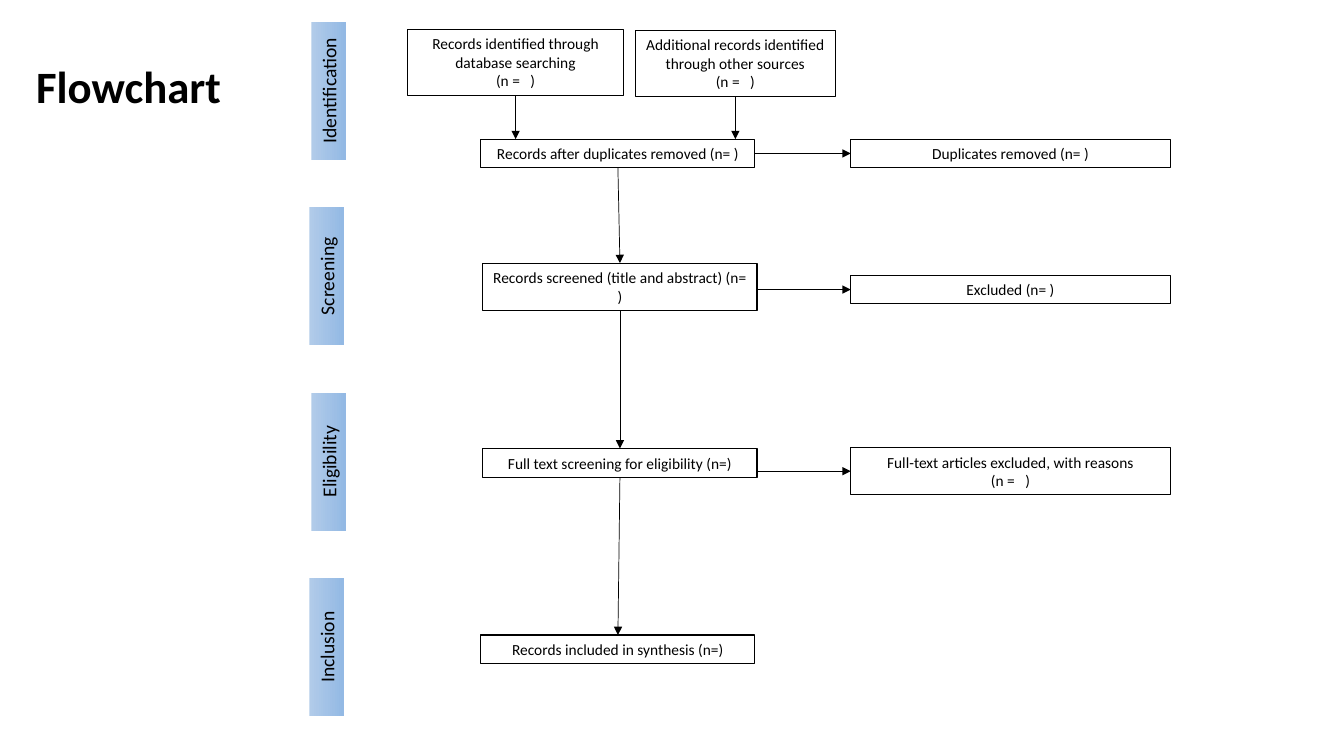
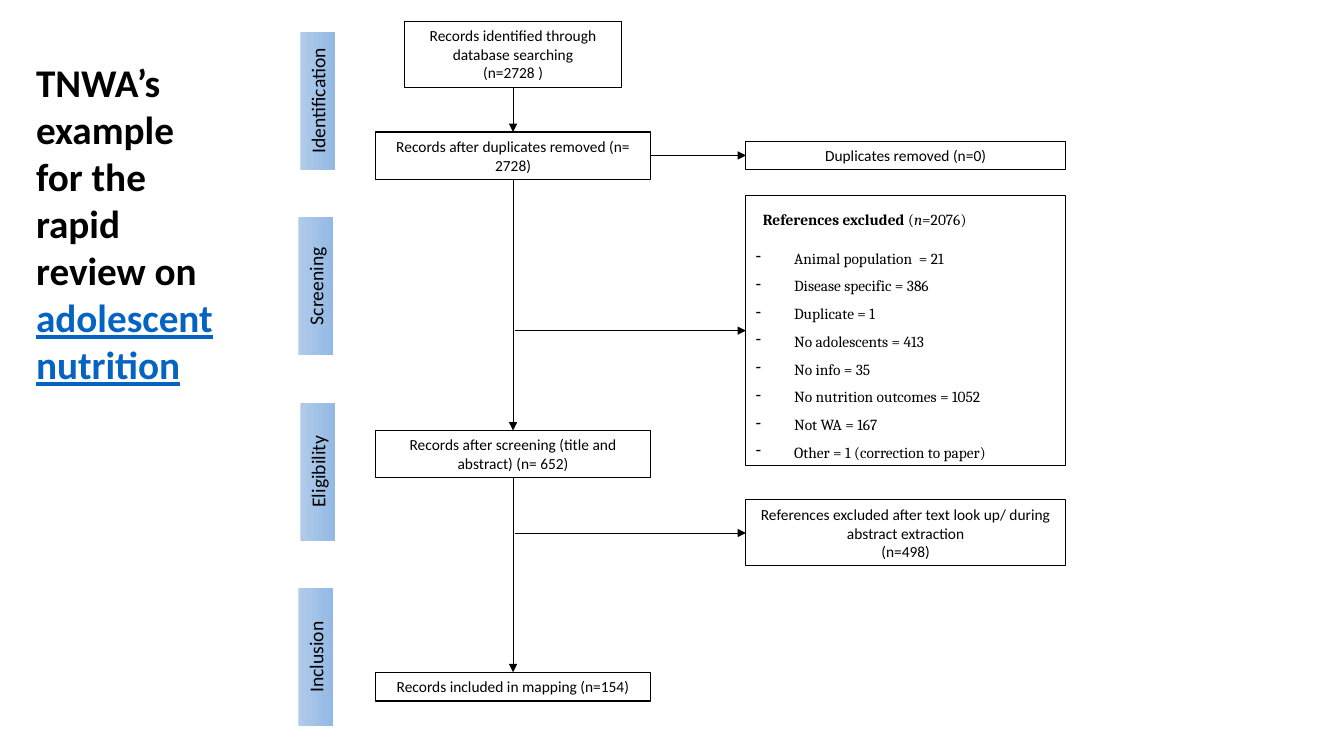
from dataclasses import dataclass

from pptx import Presentation
from pptx.dml.color import RGBColor as Rgb
from pptx.enum.shapes import MSO_CONNECTOR as Connector, MSO_SHAPE as Preset
from pptx.enum.text import MSO_ANCHOR as Anchor, MSO_AUTO_SIZE as AutoSize, PP_ALIGN as Align
from pptx.oxml.ns import qn
from pptx.oxml.xmlchemy import OxmlElement as new_element
from pptx.util import Inches, Pt


@dataclass(frozen=True)
class Theme:
    ink: Rgb = Rgb(0x00, 0x00, 0x00)
    link: Rgb = Rgb(0x05, 0x63, 0xC1)
    stage_start: Rgb = Rgb(0xB1, 0xCB, 0xE9)
    stage_end: Rgb = Rgb(0x93, 0xB9, 0xE4)
    sans: str = "Calibri"
    serif: str = "Cambria"
    body: Pt = Pt(11)
    stage: Pt = Pt(14)
    example_title: Pt = Pt(28)
    title: Pt = Pt(32)
    outline: Pt = Pt(0.75)
    arrow: Pt = Pt(0.5)


THEME = Theme()
COLUMNS, ROWS = 133.33, 75
STAGES = ("Identification", "Screening", "Eligibility", "Inclusion")
SOURCE_WIDTH, STEP_WIDTH, SIDE_WIDTH = 21.5, 27.2, 31.7
LINE_ROWS, PADDING_ROWS = 1.85, 1


def grid(cells):
    return round(cells * Inches(0.1))


def style(para, size, name=THEME.sans, bold=False):
    for span in para.runs:
        font = span.font
        font.size, font.name, font.bold = size, name, bold
        font.color.rgb = THEME.ink


def prepare(frame, anchor):
    frame.word_wrap = True
    frame.auto_size = AutoSize.SHAPE_TO_FIT_TEXT
    frame.vertical_anchor = anchor


def add_box(page, center, top, width, height, anchor=Anchor.MIDDLE):
    box = page.shapes.add_shape(
        Preset.RECTANGLE, grid(center - width / 2), grid(top), grid(width), grid(height))
    box.shadow.inherit = False
    box.fill.background()
    box.line.color.rgb = THEME.ink
    box.line.width = THEME.outline
    prepare(box.text_frame, anchor)
    return box


def write_centered(box, text, size):
    box.text_frame.text = text
    for para in box.text_frame.paragraphs:
        para.alignment = Align.CENTER
        style(para, size)


def add_step(page, text, center, top, width=STEP_WIDTH, lines=1):
    box = add_box(page, center, top, width, lines * LINE_ROWS + PADDING_ROWS)
    write_centered(box, text, THEME.body)
    return box


def add_stages(page, center, middle):
    width, height, pitch, stagger = 13.7, 3.4, 18.4, 0.2
    for index, name in enumerate(STAGES):
        label = add_box(page, center - stagger * (index % 2),
                        middle + pitch * index - height / 2, width, height)
        label.rotation = 270
        label.line.fill.background()
        label.fill.gradient()
        label.fill.gradient_angle = 270
        for stop, color in zip(label.fill.gradient_stops, (THEME.stage_start, THEME.stage_end)):
            stop.color.rgb = color
        write_centered(label, name, THEME.stage)


def add_arrow(page, start, end):
    arrow = page.shapes.add_connector(Connector.STRAIGHT, *start, *end)
    arrow.line.color.rgb = THEME.ink
    arrow.line.width = THEME.arrow
    properties = arrow.element.spPr
    head = new_element("a:tailEnd")
    head.set("type", "triangle")
    properties.find(qn("a:ln")).append(head)
    properties.append(new_element("a:effectLst"))
    return arrow


def middle_x(box):
    return box.left + box.width // 2


def middle_y(box):
    return box.top + box.height // 2


def feed(page, source, target):
    x = middle_x(source)
    arrow = add_arrow(page, (x, source.top + source.height), (x, target.top))
    arrow.begin_connect(source, 2)


def chain(page, *steps):
    for source, target in zip(steps, steps[1:]):
        arrow = add_arrow(page, (middle_x(source), source.top + source.height),
                          (middle_x(target), target.top))
        arrow.begin_connect(source, 2)
        arrow.end_connect(target, 0)


def branch(page, x, target):
    y = middle_y(target)
    arrow = add_arrow(page, (x, y), (target.left, y))
    arrow.end_connect(target, 1)


def add_title(page, text, size, height, linked=""):
    box = page.shapes.add_textbox(grid(2.6), grid(5.3), grid(21), grid(height))
    prepare(box.text_frame, Anchor.TOP)
    para = box.text_frame.paragraphs[0]
    para.text = text
    if linked:
        para.add_run().text = linked
    style(para, size, bold=True)
    if linked:
        para.runs[-1].font.color.rgb = THEME.link
        para.runs[-1].font.underline = True


def add_dash(para):
    properties = para._p.get_or_add_pPr()
    properties.set("marL", str(grid(3.8)))
    properties.set("indent", str(grid(-3.8)))
    bullet = new_element("a:buChar")
    bullet.set("char", "-")
    properties.append(bullet)


def add_exclusions(page, center, top, reasons):
    box = add_box(page, center, top, SIDE_WIDTH, 26.8, Anchor.TOP)
    frame = box.text_frame
    heading = frame.paragraphs[0]
    for text in ("References excluded ", "(", "n", "=2076)"):
        heading.add_run().text = text
    heading._p.get_or_add_pPr().set("marL", str(grid(0.7)))
    for reason in reasons:
        para = frame.add_paragraph()
        para.text = reason
        add_dash(para)
    for para in frame.paragraphs:
        para.alignment = Align.LEFT
        para.line_spacing = 1.5
        style(para, THEME.body, THEME.serif)
    for para in (heading, frame.paragraphs[-1]):
        para.space_after = Pt(8)
    heading.runs[0].font.bold = True
    heading.runs[2].font.italic = True
    return box


def build_template(page):
    trunk, side = 61.4, 100.25
    add_title(page, "Flowchart", THEME.title, 6.4)
    add_stages(page, 32.6, 9)
    database = add_step(page, "Records identified through database searching\n(n =   )",
                        51.15, 2.9, SOURCE_WIDTH, 3)
    others = add_step(page, "Additional records identified through other sources\n(n =   )",
                      72.95, 3, 19.9, 3)
    unique = add_step(page, "Records after duplicates removed (n= )", trunk - 0.1, 13.8)
    screened = add_step(page, "Records screened (title and abstract) (n= )",
                        trunk + 0.1, 26.1, lines=2)
    eligible = add_step(page, "Full text screening for eligibility (n=)", trunk + 0.1, 44.5)
    included = add_step(page, "Records included in synthesis (n=)", trunk - 0.1, 63)
    duplicates = add_step(page, "Duplicates removed (n= )", side, 13.8, SIDE_WIDTH)
    excluded = add_step(page, "Excluded (n= )", side, 27.3, SIDE_WIDTH)
    articles = add_step(page, "Full-text articles excluded, with reasons\n(n =   )",
                        side, 44.4, SIDE_WIDTH, 2)
    feed(page, database, unique)
    feed(page, others, unique)
    chain(page, unique, screened, eligible, included)
    for step, removed in ((unique, duplicates), (screened, excluded), (eligible, articles)):
        branch(page, step.left + step.width, removed)


def build_example(page):
    trunk, side = 50.9, 89.85
    add_title(page, "TNWA’s example for the rapid review on ", THEME.example_title, 34,
              "adolescent nutrition")
    add_stages(page, 31.5, 10)
    database = add_step(page, "Records identified through database searching\n(n=2728 )",
                        trunk, 2.1, SOURCE_WIDTH, 3)
    unique = add_step(page, "Records after duplicates removed (n= 2728)", trunk, 13.1, lines=2)
    screened = add_step(page, "Records after screening (title and abstract) (n= 652)",
                        trunk, 42.7, lines=2)
    included = add_step(page, "Records included in mapping (n=154)", trunk, 66.7)
    duplicates = add_step(page, "Duplicates removed (n=0)", side, 14, SIDE_WIDTH)
    exclusions = add_exclusions(page, side, 19.4, (
        "Animal population  = 21", "Disease specific = 386", "Duplicate = 1",
        "No adolescents = 413", "No info = 35", "No nutrition outcomes = 1052",
        "Not WA = 167", "Other = 1 (correction to paper)"))
    looked_up = add_step(
        page, "References excluded after text look up/ during abstract extraction\n(n=498)",
        side, 49.6, SIDE_WIDTH, 3)
    chain(page, database, unique, screened, included)
    branch(page, unique.left + unique.width, duplicates)
    for removed in (exclusions, looked_up):
        branch(page, grid(trunk + 0.2), removed)


def main():
    deck = Presentation()
    deck.slide_width, deck.slide_height = grid(COLUMNS), grid(ROWS)
    for build in (build_template, build_example):
        build(deck.slides.add_slide(deck.slide_layouts[6]))
    deck.save("out.pptx")


if __name__ == "__main__":
    main()
